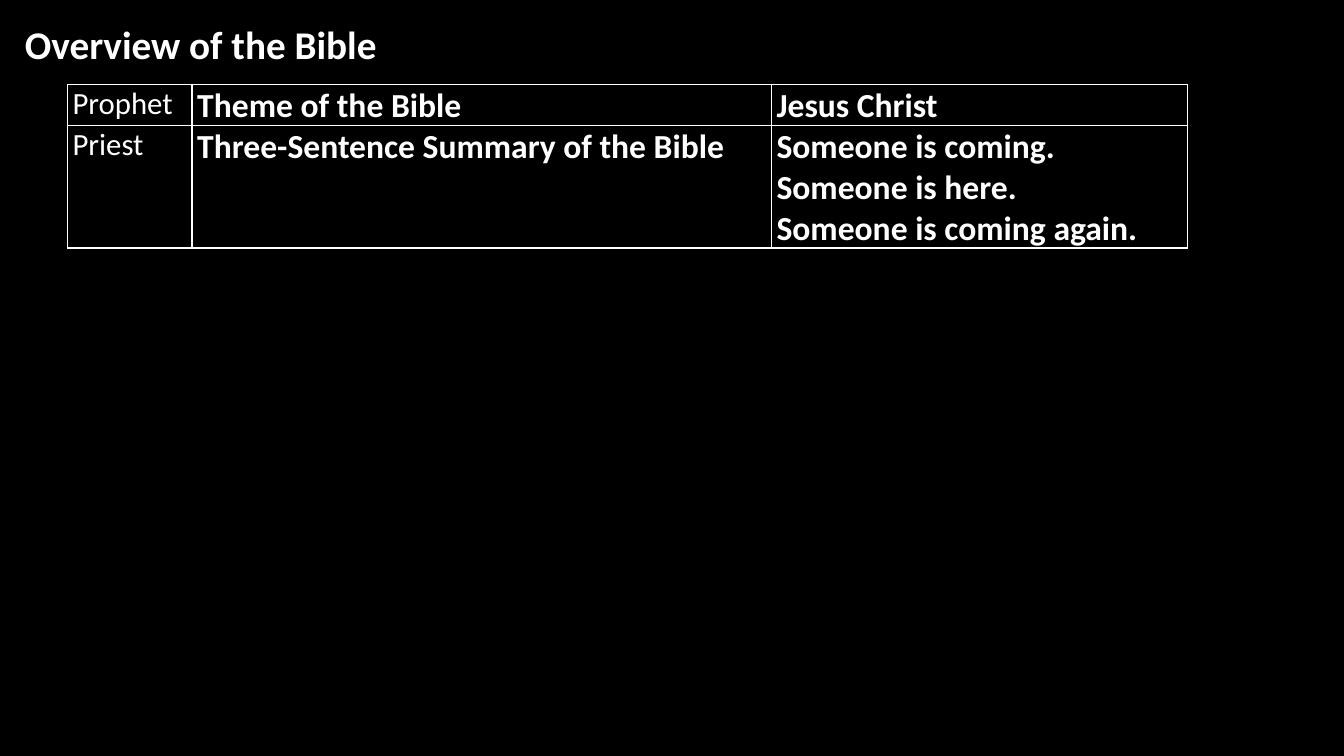
from dataclasses import dataclass

from lxml.etree import SubElement
from pptx import Presentation
from pptx.dml.color import RGBColor
from pptx.enum.text import MSO_AUTO_SIZE
from pptx.oxml.ns import qn
from pptx.util import Cm, Pt


@dataclass(frozen=True)
class Theme:
    background: str = "000000"
    ink: str = "FFFFFF"
    font: str = "Calibri"
    heading_size: int = 28
    label_size: int = 22
    body_size: int = 24
    border_width: int = 1


theme = Theme()


def write(paragraph, text, size, bold):
    run = paragraph.add_run()
    run.text = text
    run.font.name = theme.font
    run.font.size = Pt(size)
    run.font.bold = bold
    run.font.color.rgb = RGBColor.from_string(theme.ink)


def add_borders(cell):
    properties = cell._tc.get_or_add_tcPr()
    for side in ("lnL", "lnR", "lnT", "lnB"):
        line = SubElement(properties, qn(f"a:{side}"), w=str(Pt(theme.border_width)))
        fill = SubElement(line, qn("a:solidFill"))
        SubElement(fill, qn("a:srgbClr"), val=theme.ink)


presentation = Presentation()
presentation.slide_width = Cm(33.87)
presentation.slide_height = Cm(19.05)
slide = presentation.slides.add_slide(presentation.slide_layouts[6])
slide.background.fill.solid()
slide.background.fill.fore_color.rgb = RGBColor.from_string(theme.background)

heading = slide.shapes.add_textbox(Cm(0.38), Cm(0.38), Cm(17.04), Cm(1.45)).text_frame
heading.word_wrap = True
heading.auto_size = MSO_AUTO_SIZE.SHAPE_TO_FIT_TEXT
write(heading.paragraphs[0], "Overview of the Bible", theme.heading_size, True)

overview_rows = [
    ("Prophet", "Theme of the Bible", ["Jesus Christ"]),
    (
        "Priest",
        "Three-Sentence Summary of the Bible",
        ["Someone is coming.", "Someone is here.", "Someone is coming again."],
    ),
]
column_widths = [3.14, 14.6, 10.48]
row_heights = [1.03, 3.08]

overview = slide.shapes.add_table(
    len(row_heights), len(column_widths),
    Cm(1.7), Cm(2.13), Cm(sum(column_widths)), Cm(sum(row_heights)),
).table
overview.first_row = False
overview.horz_banding = False
for column, width in zip(overview.columns, column_widths):
    column.width = Cm(width)

for row, height, (office, topic, answers) in zip(overview.rows, row_heights, overview_rows):
    row.height = Cm(height)
    entries = [
        ([office], theme.label_size, False),
        ([topic], theme.body_size, True),
        (answers, theme.body_size, True),
    ]
    for cell, (sentences, size, bold) in zip(row.cells, entries):
        cell.margin_left = Cm(0.13)
        cell.margin_top = cell.margin_right = Cm(0.02)
        cell.margin_bottom = Cm(0)
        add_borders(cell)
        cell.fill.background()
        for index, sentence in enumerate(sentences):
            frame = cell.text_frame
            paragraph = frame.add_paragraph() if index else frame.paragraphs[0]
            write(paragraph, sentence, size, bold)

presentation.save("out.pptx")
